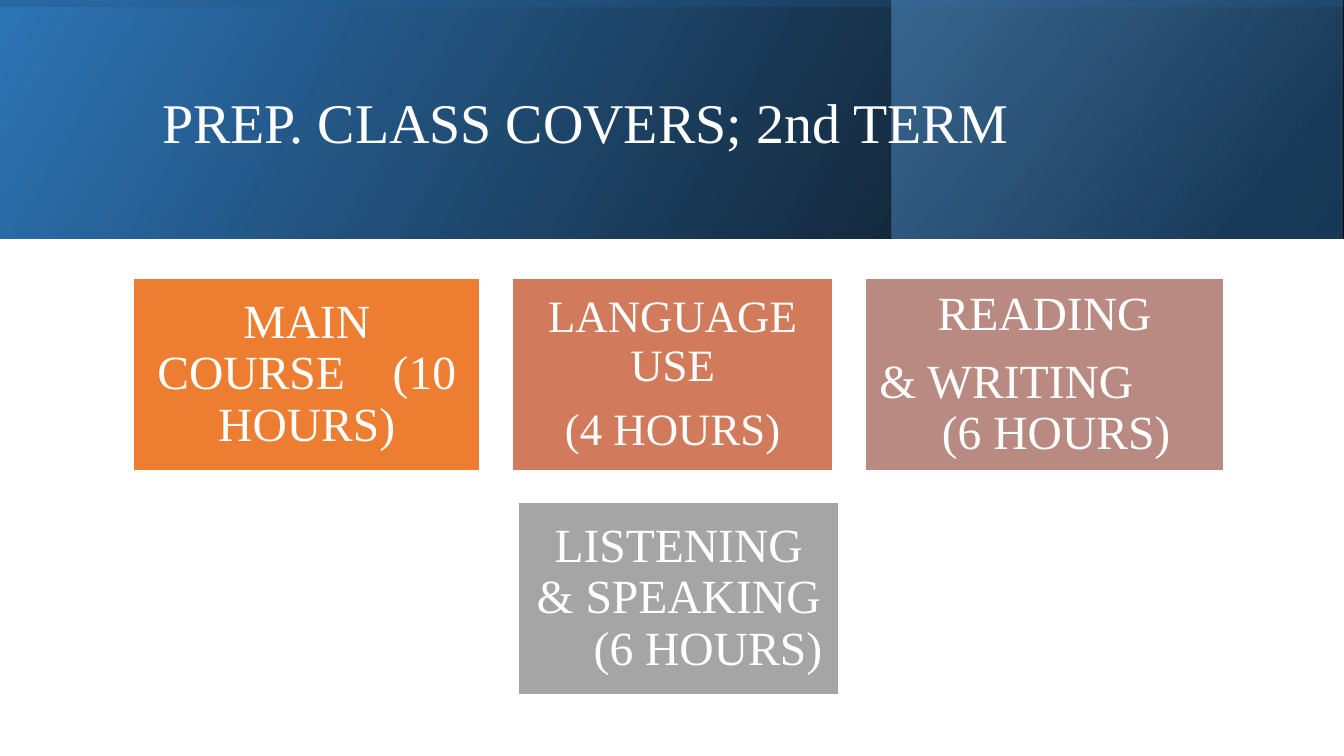
from dataclasses import dataclass

import pptx
import pptx.dml.color
import pptx.enum.shapes
import pptx.enum.text
import pptx.oxml
import pptx.oxml.ns
import pptx.slide
import pptx.util

RGBColor = pptx.dml.color.RGBColor
Align = pptx.enum.text.PP_ALIGN

WHITE = RGBColor(0xFF, 0xFF, 0xFF)
BLACK = RGBColor(0x00, 0x00, 0x00)
BLUE = RGBColor(0x2E, 0x75, 0xB6)
NAVY = RGBColor(0x1F, 0x4E, 0x79)
SKY = RGBColor(0x5B, 0x9B, 0xD5)
ORANGE = RGBColor(0xED, 0x7D, 0x31)
TERRACOTTA = RGBColor(0xD1, 0x7B, 0x5C)
ROSE = RGBColor(0xB9, 0x8A, 0x82)
GRAY = RGBColor(0xA5, 0xA5, 0xA5)

FONT = "Times New Roman"
SLIDE_WIDTH = pptx.util.Inches(13.33)
SLIDE_HEIGHT = pptx.util.Inches(7.5)

# Shares of the slide, in percent
BAND_HEIGHT = 31.6
CARDS_CENTER = 50.5
CARDS_TOP = 36.8
CARD_HEIGHT = 25.47
COLUMN_GAP = 2.4
ROW_GAP = 4.13


@dataclass
class Stop:
    position: int
    color: RGBColor
    opacity: int = 100


@dataclass
class Band:
    left: float
    width: float
    angle: int
    stops: tuple[Stop, ...]
    upright: bool = False


@dataclass
class Line:
    """A paragraph; pieces are parted by one widened space."""
    pieces: tuple[str, ...]
    space_after: float = 0
    indent: float = 0
    align: Align = Align.CENTER


@dataclass
class Card:
    width: float
    color: RGBColor
    size: int
    lines: tuple[Line, ...]


BANDS = (
    Band(0, 100, 330, (Stop(0, BLACK, 96), Stop(100, BLUE))),
    Band(66.32, 33.6, 320, (Stop(19, NAVY, 68), Stop(100, SKY, 48))),
    Band(0, 100, 350, (Stop(23, BLUE, 16), Stop(99, BLACK, 45)), upright=True),
)

CARD_ROWS = (
    (
        Card(25.8, ORANGE, 34, (Line(("MAIN COURSE", "(10 HOURS)")),)),
        Card(23.85, TERRACOTTA, 32,
             (Line(("LANGUAGE USE",), space_after=11), Line(("(4 HOURS)",)))),
        Card(26.7, ROSE, 34,
             (Line(("READING",), space_after=12),
              Line(("& WRITING",), align=Align.LEFT),
              Line(("(6 HOURS)",), indent=0.23))),
    ),
    (
        Card(23.85, GRAY, 34,
             (Line(("LISTENING & SPEAKING",)), Line(("(6 HOURS)",), indent=0.58))),
    ),
)


def across(percent: float) -> int:
    return round(SLIDE_WIDTH * percent / 100)


def down(percent: float) -> int:
    return round(SLIDE_HEIGHT * percent / 100)


def gradient_xml(band: Band) -> str:
    stops = "".join(
        f'<a:gs pos="{stop.position * 1000}"><a:srgbClr val="{stop.color}">'
        f'<a:alpha val="{stop.opacity * 1000}"/></a:srgbClr></a:gs>'
        for stop in band.stops
    )
    return (
        f'<a:gradFill {pptx.oxml.ns.nsdecls("a")} rotWithShape="1"><a:gsLst>{stops}</a:gsLst>'
        f'<a:lin ang="{band.angle * 60000}" scaled="0"/></a:gradFill>'
    )


def add_band(page: pptx.slide.Slide, band: Band) -> None:
    """Adds a mirrored gradient band behind the title; an upright one is turned on its side."""
    left, top, width, height = across(band.left), 0, across(band.width), down(BAND_HEIGHT)
    if band.upright:
        left, top = left + (width - height) // 2, (height - width) // 2
        width, height = height, width
    shape = page.shapes.add_shape(
        pptx.enum.shapes.MSO_SHAPE.RECTANGLE, left, top, width, height)
    shape.shadow.inherit = False
    shape.line.fill.background()
    shape.rotation = 270 if band.upright else 0
    properties = shape.element.spPr
    properties.xfrm.set("flipH", "1")
    shape.fill.gradient()
    old_fill = properties.find(pptx.oxml.ns.qn("a:gradFill"))
    properties.replace(old_fill, pptx.oxml.parse_xml(gradient_xml(band)))
    page.shapes.title.element.addprevious(shape.element)


def add_title(page: pptx.slide.Slide, text: str) -> None:
    title = page.shapes.title
    title.left, title.top = across(11.33), down(5.07)
    title.width, title.height = across(79.74), down(22.93)
    frame = title.text_frame
    frame.text = text
    frame.word_wrap = True
    frame.vertical_anchor = pptx.enum.text.MSO_ANCHOR.MIDDLE
    para = frame.paragraphs[0]
    para.alignment = Align.LEFT
    para.line_spacing = 0.9
    font = para.runs[0].font
    font.name, font.size, font.color.rgb = FONT, pptx.util.Pt(40), WHITE


def add_card(page: pptx.slide.Slide, card: Card, left: float, top: float) -> None:
    box = page.shapes.add_shape(
        pptx.enum.shapes.MSO_SHAPE.RECTANGLE,
        across(left), down(top), across(card.width), down(CARD_HEIGHT))
    box.shadow.inherit = False
    box.fill.solid()
    box.fill.fore_color.rgb = card.color
    box.line.color.rgb = WHITE
    box.line.width = pptx.util.Pt(1)
    frame = box.text_frame
    frame.word_wrap = True
    frame.vertical_anchor = pptx.enum.text.MSO_ANCHOR.MIDDLE
    inset = pptx.util.Inches(0.14)
    frame.margin_left = frame.margin_top = frame.margin_right = frame.margin_bottom = inset
    for number, line in enumerate(card.lines):
        para = frame.add_paragraph() if number else frame.paragraphs[0]
        para.alignment = line.align
        para.line_spacing = 0.9
        para.space_after = pptx.util.Pt(line.space_after)
        if line.indent:
            para._p.get_or_add_pPr().set("marL", str(pptx.util.Inches(line.indent)))
        for index, piece in enumerate(line.pieces):
            if index:
                gap = para.add_run()
                gap.text = " "
                gap._r.get_or_add_rPr().set("spc", "2550")
            para.add_run().text = piece
        for span in para.runs:
            font = span.font
            font.name, font.size, font.color.rgb = FONT, pptx.util.Pt(card.size), WHITE


def main() -> None:
    deck = pptx.Presentation()
    deck.slide_width, deck.slide_height = SLIDE_WIDTH, SLIDE_HEIGHT
    page = deck.slides.add_slide(deck.slide_layouts.get_by_name("Title Only"))
    for band in BANDS:
        add_band(page, band)
    add_title(page, "PREP. CLASS COVERS; 2nd TERM")
    for row_number, row in enumerate(CARD_ROWS):
        row_width = sum(card.width for card in row) + COLUMN_GAP * (len(row) - 1)
        left = CARDS_CENTER - row_width / 2
        for card in row:
            add_card(page, card, left, CARDS_TOP + row_number * (CARD_HEIGHT + ROW_GAP))
            left += card.width + COLUMN_GAP
    deck.save("out.pptx")


if __name__ == "__main__":
    main()
